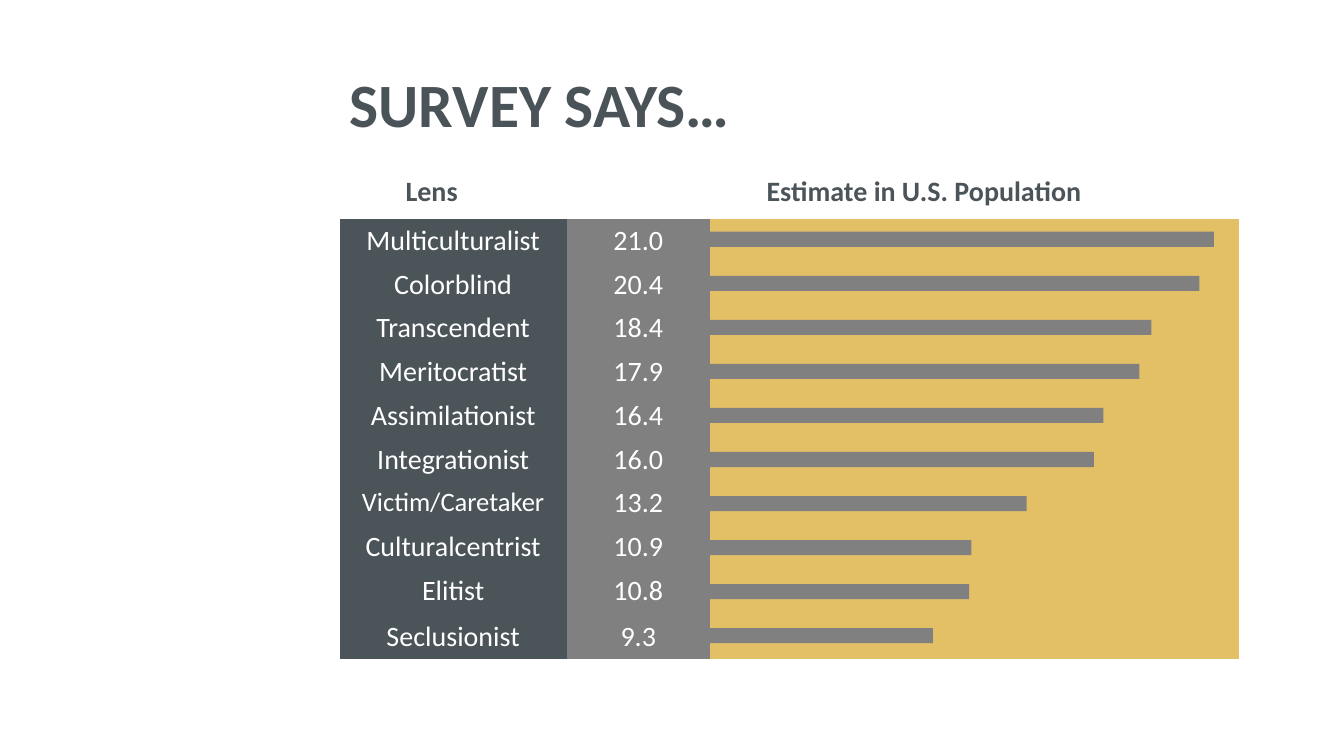
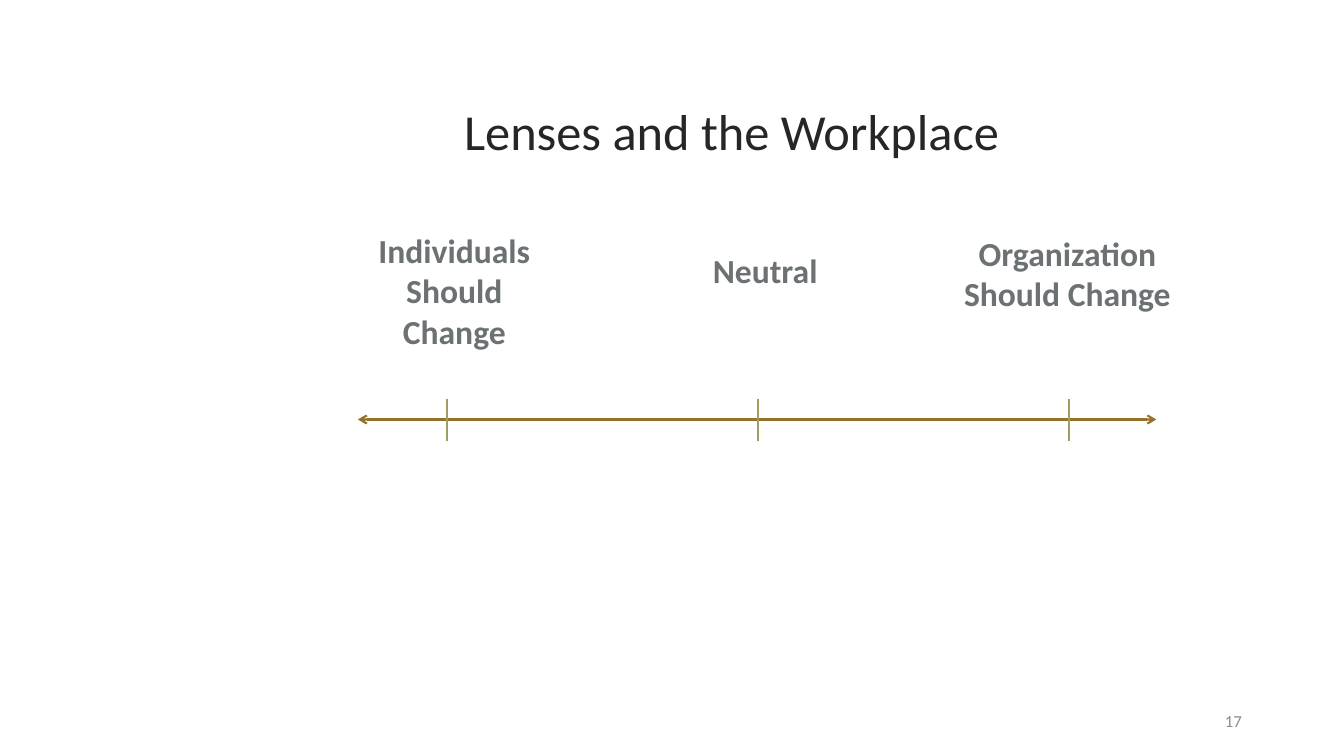
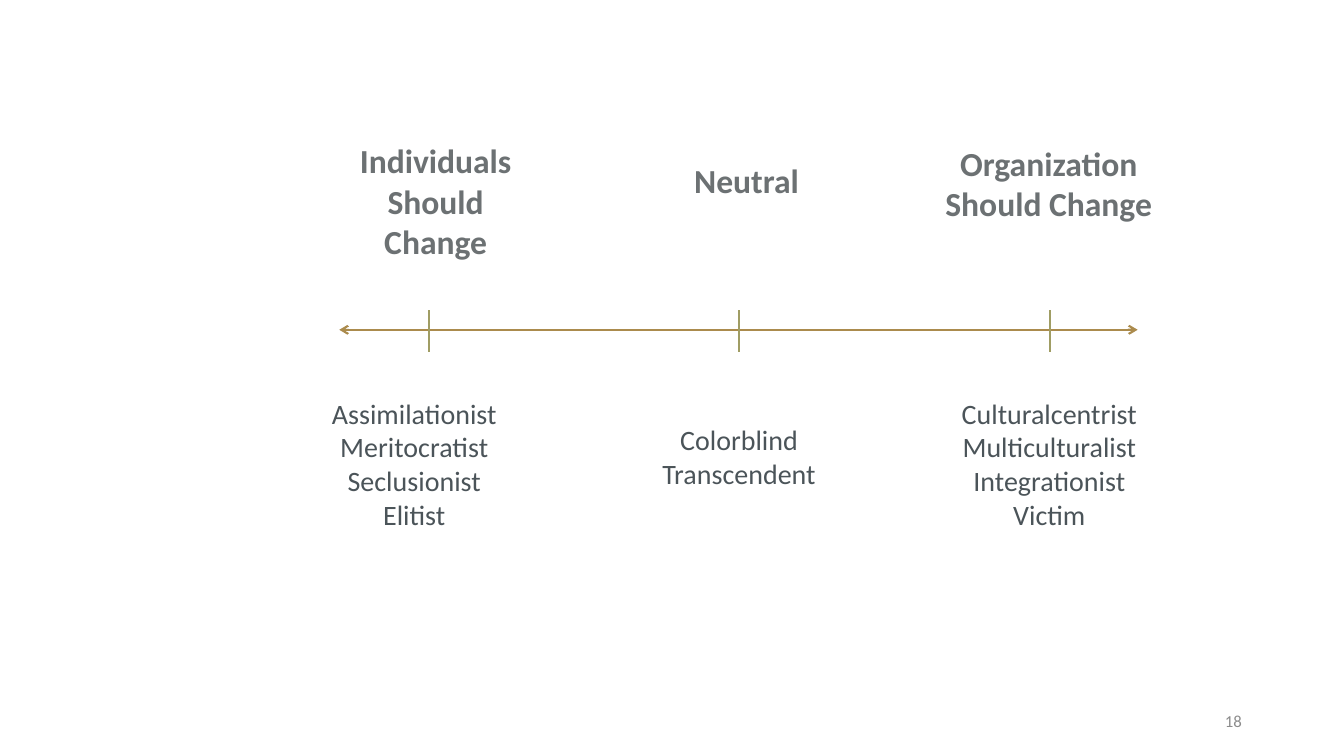
from lxml.etree import SubElement
from pptx import Presentation
from pptx.dml.color import RGBColor
from pptx.enum.shapes import MSO_CONNECTOR, MSO_SHAPE
from pptx.enum.text import MSO_ANCHOR, PP_ALIGN
from pptx.oxml.ns import qn
from pptx.util import Cm, Pt

FONT = "Calibri"
TITLE_SLATE = RGBColor(0x4A, 0x53, 0x58)
SLATE = RGBColor(0x4B, 0x54, 0x59)
GRAY = RGBColor(0x80, 0x80, 0x80)
GOLD = RGBColor(0xE3, 0xC0, 0x66)
WHITE = RGBColor(0xFF, 0xFF, 0xFF)
INK = RGBColor(0x26, 0x26, 0x26)
LABEL_GRAY = RGBColor(0x6C, 0x71, 0x73)
NUMBER_GRAY = RGBColor(0x8C, 0x8C, 0x8C)
OLIVE = RGBColor(0xA0, 0x9D, 0x64)
BROWN = RGBColor(0x95, 0x71, 0x2A)
TAN = RGBColor(0xAB, 0x8B, 0x4D)
NO_STYLE_NO_GRID = "{2D5ABB26-0587-4C30-8999-92F81FD0307C}"


def add_text(tf, lines, size, color, bold=False, align=PP_ALIGN.LEFT):
    """Fill a text frame with one paragraph per line and return the last one."""
    tf.word_wrap = True
    for i, line in enumerate(lines):
        p = tf.add_paragraph() if i else tf.paragraphs[0]
        p.alignment = align
        r = p.add_run()
        r.text = line
        r.font.name = FONT
        r.font.size = Pt(size)
        r.font.bold = bold
        r.font.color.rgb = color
    return p


def add_line(s, x1, y1, x2, y2, color, arrows=False):
    line = s.shapes.add_connector(MSO_CONNECTOR.STRAIGHT, Cm(x1), Cm(y1), Cm(x2), Cm(y2))
    line.line.color.rgb = color
    line.line.width = Pt(1.5)
    if arrows:
        ln = line.line._get_or_add_ln()
        for end in ("a:headEnd", "a:tailEnd"):
            SubElement(ln, qn(end), type="arrow")
    SubElement(line._element.spPr, qn("a:effectLst"))


prs = Presentation()
prs.slide_width, prs.slide_height = Cm(33.87), Cm(19.05)
blank = prs.slide_layouts[6]

# Survey results
s = prs.slides.add_slide(blank)
tb = s.shapes.add_textbox(Cm(8.56), Cm(1.75), Cm(19.58), Cm(2.49))
p = add_text(tb.text_frame, ["SURVEY SAYS…"], 44, TITLE_SLATE, bold=True)
p.line_spacing = 0.9

tb = s.shapes.add_textbox(Cm(8.79), Cm(4.24), Cm(21.16), Cm(1.09))
p = add_text(tb.text_frame, ["\tLens\tEstimate in U.S. Population"], 20, SLATE, bold=True)
tabs = SubElement(p._p.get_or_add_pPr(), qn("a:tabLst"))
for stop in (1.18, 10.28):
    SubElement(tabs, qn("a:tab"), pos=str(Cm(stop)), algn="l")

survey = [
    ("Multiculturalist", 21.0), ("Colorblind", 20.4), ("Transcendent", 18.4),
    ("Meritocratist", 17.9), ("Assimilationist", 16.4), ("Integrationist", 16.0),
    ("Victim/Caretaker", 13.2), ("Culturalcentrist", 10.9), ("Elitist", 10.8),
    ("Seclusionist", 9.3),
]
widths = (5.72, 3.61, 13.33)
table_left, table_top, row_height = 8.56, 5.51, 1.1
frame = s.shapes.add_table(len(survey), len(widths), Cm(table_left), Cm(table_top),
                           Cm(sum(widths)), Cm(row_height * len(survey)))
table = frame.table
table.first_row = table.horz_banding = False
table._tbl.tblPr.find(qn("a:tableStyleId")).text = NO_STYLE_NO_GRID
for column, width in zip(table.columns, widths):
    column.width = Cm(width)

bar_left, bar_pitch, cm_per_point = table_left + sum(widths[:2]), 1.11, 12.7 / 21
for i, (lens, share) in enumerate(survey):
    table.rows[i].height = Cm(1.17 if lens == "Elitist" else row_height)
    for cell, fill in zip(table.rows[i].cells, (SLATE, GRAY, GOLD)):
        cell.fill.solid()
        cell.fill.fore_color.rgb = fill
    lens_size = 19 if lens == "Victim/Caretaker" else 20
    add_text(table.cell(i, 0).text_frame, [lens], lens_size, WHITE, align=PP_ALIGN.CENTER)
    add_text(table.cell(i, 1).text_frame, [f"{share:.1f}"], 20, WHITE, align=PP_ALIGN.CENTER)
    bar = s.shapes.add_shape(MSO_SHAPE.RECTANGLE, Cm(bar_left), Cm(5.84 + i * bar_pitch),
                             Cm(share * cm_per_point), Cm(0.38))
    bar.shadow.inherit = False
    bar.fill.solid()
    bar.fill.fore_color.rgb = GRAY
    bar.line.fill.background()

# Who should change: the same scale, first alone and then with the lenses placed on it
# Label and lens boxes are (left, top, width, height); labels are offset from the scale's start
labels = [
    ("Individuals Should Change", -0.37, -4.9, 5.6, 3.33),
    ("Neutral", 7.98, -4.4, 4.57, 1.27),
    ("Organization Should Change", 14.4, -4.83, 6.96, 2.31),
]
lens_groups = [
    (["Assimilationist", "Meritocratist", "Seclusionist", "Elitist"], 7.8, 9.86, 5.28, 3.68),
    (["Colorblind", "Transcendent"], 16.15, 10.52, 4.95, 1.96),
    (["Culturalcentrist", "Multiculturalist", "Integrationist", "Victim"], 23.65, 9.86, 5.59, 3.68),
]
scales = [
    (17, "Lenses and the Workplace", 9.02, 10.57, BROWN, []),
    (18, None, 8.55, 8.31, TAN, lens_groups),
]
for number, title, left, y, color, groups in scales:
    s = prs.slides.add_slide(blank)
    if title:
        tb = s.shapes.add_textbox(Cm(8.28), Cm(2.41), Cm(20.32), Cm(3.02))
        add_text(tb.text_frame, [title], 36, INK, align=PP_ALIGN.CENTER)

    add_line(s, left, y, left + 20.12, y, color, arrows=True)
    for i, (label, dx, dy, w, h) in enumerate(labels):
        tb = s.shapes.add_textbox(Cm(left + dx), Cm(y + dy), Cm(w), Cm(h))
        add_text(tb.text_frame, [label], 24, LABEL_GRAY, bold=True, align=PP_ALIGN.CENTER)
        tick = left + 2.25 + i * 7.83
        add_line(s, tick, y + 0.55, tick, y - 0.51, OLIVE)

    for lenses, x, top, w, h in groups:
        tb = s.shapes.add_textbox(Cm(x), Cm(top), Cm(w), Cm(h))
        add_text(tb.text_frame, lenses, 20, SLATE, align=PP_ALIGN.CENTER)

    tb = s.shapes.add_textbox(Cm(23.93), Cm(17.65), Cm(7.62), Cm(1.02))
    tb.text_frame.vertical_anchor = MSO_ANCHOR.MIDDLE
    add_text(tb.text_frame, [str(number)], 12, NUMBER_GRAY, align=PP_ALIGN.RIGHT)

prs.save("out.pptx")
